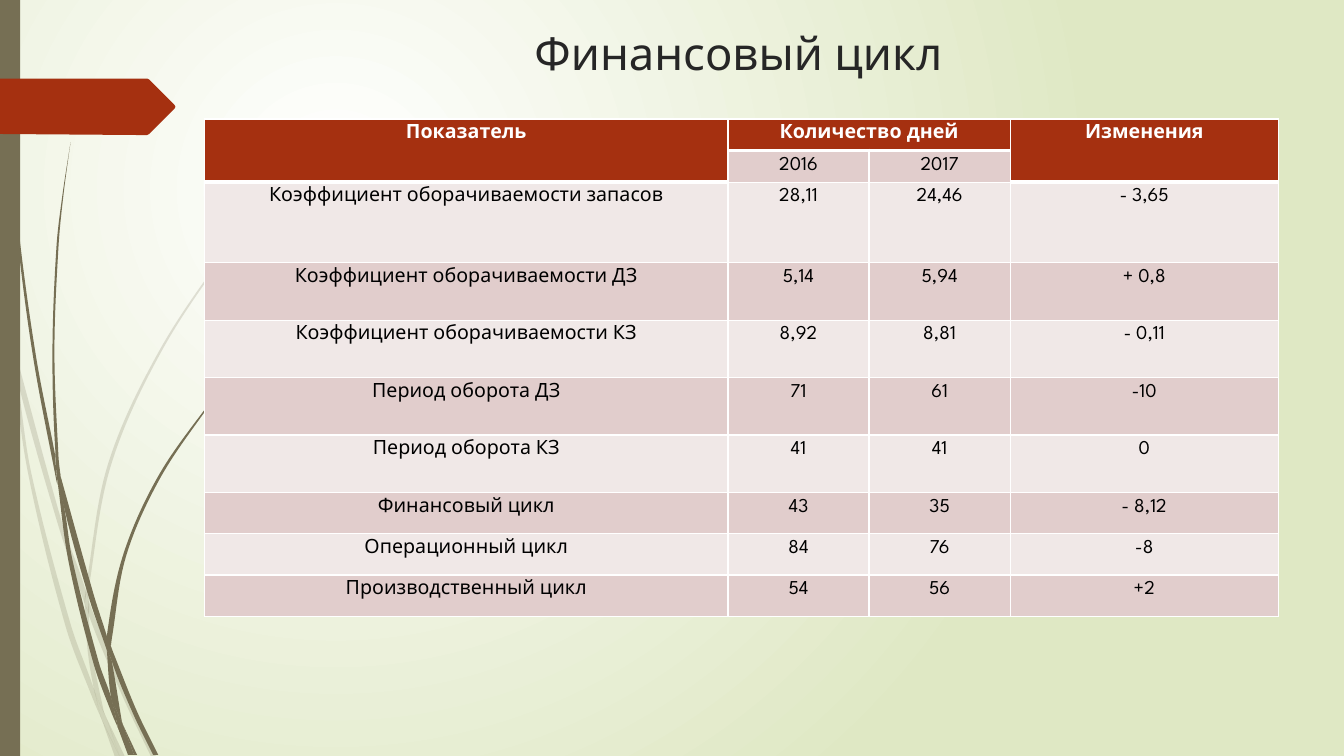
import math

from pptx import Presentation
from pptx import util as u
from pptx.dml.color import RGBColor
from pptx.enum import text
from pptx.enum.shapes import MSO_SHAPE
from pptx.oxml import ns
from lxml import etree

FONT = "League Spartan"
INK = {"olive": "766F54", "rust": "A53010", "white": "FFFFFF", "lime": "DFE8C4",
       "title": "262626", "black": "000000", "rose": "E1CDCC", "pale": "F0E8E7"}

# Outlines are x, y pairs in hundredths of an inch.
FAINT = [
    [(11, 350), (9, 322), (0, 282), (0, 299), (10, 344)],
    [(58, 522), (84, 599), (85, 586), (62, 520), (14, 345), (17, 376)],
    [(92, 607), (88, 596), (88, 610), (123, 694), (150, 751), (155, 751), (127, 692)],
    [(119, 751), (124, 751), (105, 711)],
    [(93, 683), (70, 619), (31, 469), (17, 376), (11, 350), (28, 470), (65, 621),
     (92, 693), (101, 714), (99, 707)],
    [(84, 599), (87, 646), (93, 683), (96, 692), (105, 711), (103, 706), (91, 646),
     (88, 610), (88, 608)],
    [(88, 584), (110, 462), (160, 349), (229, 245), (268, 198), (290, 175), (312, 154),
     (312, 153), (289, 175), (268, 197), (228, 244), (158, 348), (107, 461), (85, 584),
     (85, 586), (88, 596)],
    [(101, 714), (114, 751), (119, 751)],
    [(88, 608), (88, 610), (88, 596), (85, 586), (84, 599)],
    [(96, 692), (93, 683), (99, 707), (101, 714), (119, 751), (105, 711)],
]
DARK = [
    [(7, 110), (17, 233), (33, 355), (56, 477), (57, 481), (55, 457), (55, 453), (36, 355),
     (19, 232), (8, 109), (5, 48), (4, 0), (3, 0), (4, 48)],
    [(88, 592), (106, 645), (106, 633), (106, 631), (93, 590), (60, 472), (64, 505)],
    [(113, 649), (110, 641), (111, 656), (132, 708), (152, 749), (157, 749), (136, 706)],
    [(110, 691), (98, 657), (72, 556), (64, 505), (57, 477), (68, 557), (93, 659),
     (111, 708), (117, 722), (116, 717)],
    [(60, 472), (58, 453), (54, 349), (58, 245), (63, 193), (70, 141), (62, 193), (56, 245),
     (52, 349), (55, 449)],
    [(133, 749), (136, 749), (122, 719)],
    [(57, 477), (64, 505), (60, 472), (55, 449), (55, 453)],
    [(111, 633), (125, 552), (158, 476), (205, 406), (231, 374), (245, 359), (261, 344),
     (260, 344), (245, 358), (231, 373), (204, 405), (156, 474), (122, 551), (106, 631),
     (110, 641)],
    [(117, 722), (127, 749), (131, 749)],
    [(106, 645), (110, 691), (116, 706), (122, 719), (121, 716), (111, 656), (109, 651)],
    [(106, 645), (109, 651), (111, 656), (110, 641), (106, 631), (106, 633)],
    [(116, 706), (110, 691), (116, 717), (117, 722), (130, 749), (133, 749), (122, 719)],
]
ARROW = [(173, 108), (148, 133), (146, 134), (136, 134), (0, 133), (0, 78), (146, 78),
         (148, 79), (173, 104), (174, 106)]

COLS = [5.19, 1.4, 1.4, 2.66]
TALLS = [0.28] * 2 + [0.8] + [0.57] * 4 + [0.41] * 3
ROWS = [
    ["Показатель", "Количество дней", "", "Изменения"],
    ["", "2016", "2017", ""],
    ["Коэффициент оборачиваемости запасов", "28,11", "24,46", "- 3,65"],
    ["Коэффициент оборачиваемости ДЗ", "5,14", "5,94", "+ 0,8"],
    ["Коэффициент оборачиваемости КЗ", "8,92", "8,81", "- 0,11"],
    ["Период оборота ДЗ", "71", "61", "-10"],
    ["Период оборота КЗ", "41", "41", "0"],
    ["Финансовый цикл", "43", "35", "- 8,12"],
    ["Операционный цикл", "84", "76", "-8"],
    ["Производственный цикл", "54", "56", "+2"],
]


def rgb(name):
    return RGBColor.from_string(INK[name])


def sub(node, tag, **attrs):
    return etree.SubElement(node, ns.qn(tag), attrs)


def paint(shape, name):
    shape.shadow.inherit = False
    shape.fill.solid()
    shape.fill.fore_color.rgb = rgb(name)
    shape.line.fill.background()


def unit(a, b):
    size = math.dist(a, b) or 1
    return (b[0] - a[0]) / size, (b[1] - a[1]) / size


def slopes(prev, here, after):
    """Give the directions into and out of a point: one if smooth, two at a corner."""
    into, out = unit(prev, here), unit(here, after)
    if into[0] * out[0] + into[1] * out[1] < 0.77:
        return into, out
    return (unit(prev, after),) * 2


def bend(shape, points):
    """Turn the straight sides of a closed outline into curves."""
    trail = shape._element.find(".//" + ns.qn("a:path"))
    for node in list(trail)[1:]:
        trail.remove(node)
    left, top = (min(axis) for axis in zip(*points))
    ways = [slopes(points[i - 1], here, points[(i + 1) % len(points)])
            for i, here in enumerate(points)]
    for i in range(len(points)):
        a, b = points[i - 1], points[i]
        out, into = ways[i - 1][1], ways[i][0]
        reach = math.dist(a, b) / 3
        knots = ((a[0] + out[0] * reach, a[1] + out[1] * reach),
                 (b[0] - into[0] * reach, b[1] - into[1] * reach), b)
        curve = sub(trail, "a:cubicBezTo")
        for x, y in knots:
            sub(curve, "a:pt", x=str(round(x - left)), y=str(round(y - top)))
    sub(trail, "a:close")


def add_form(slide, outline, name, alpha=None, curved=True):
    """Draw a closed outline; alpha is its opacity in percent."""
    points = [(u.Inches(x / 100), u.Inches(y / 100)) for x, y in outline]
    points = points[1:] + points[:1]
    form = slide.shapes.build_freeform(*points[-1])
    form.add_line_segments(points[:-1], close=True)
    shape = form.convert_to_shape()
    if curved:
        bend(shape, points)
    paint(shape, name)
    if alpha:
        tint = shape._element.spPr.find(".//" + ns.qn("a:srgbClr"))
        sub(tint, "a:alpha", val=str(alpha * 1000))


def set_back(slide):
    """Fill the background with a round gradient centred at upper left."""
    fill = slide.background.fill
    fill.gradient()
    for stop, name in zip(fill.gradient_stops, ("white", "lime")):
        stop.color.rgb = rgb(name)
    grad = slide._element.find(".//" + ns.qn("a:gradFill"))
    grad.remove(grad.find(ns.qn("a:lin")))
    ring = sub(grad, "a:path", path="circle")
    sub(ring, "a:fillToRect", l="50000", t="50000", r="100000", b="100000")


def write(frame, words, size, name, bold=False):
    para = frame.paragraphs[0]
    para.alignment = text.PP_ALIGN.CENTER
    run = para.add_run()
    run.text = words
    font = run.font
    font.name, font.size, font.bold = FONT, u.Pt(size), bold
    font.color.rgb = rgb(name)


def add_title(slide, words):
    box = slide.shapes.add_textbox(u.Inches(2.45), u.Inches(0.24), u.Inches(9.75), u.Inches(0.6))
    frame = box.text_frame
    frame.word_wrap = True
    frame.vertical_anchor = text.MSO_ANCHOR.BOTTOM
    write(frame, words, 32.4, "title")


def edge(cell, base):
    """Give a cell white borders; base is the width of the lower one."""
    props = cell._tc.get_or_add_tcPr()
    for side, width in (("L", 1), ("R", 1), ("T", 1), ("B", base)):
        line = sub(props, "a:ln" + side, w=str(u.Pt(width)))
        sub(sub(line, "a:solidFill"), "a:srgbClr", val=INK["white"])


def add_grid(slide):
    frame = slide.shapes.add_table(len(ROWS), len(COLS), u.Inches(2.03), u.Inches(1.18),
                                   u.Inches(sum(COLS)), u.Inches(sum(TALLS)))
    grid = frame.table
    for col, width in zip(grid.columns, COLS):
        col.width = u.Inches(width)
    for row, tall in zip(grid.rows, TALLS):
        row.height = u.Inches(tall)
    for first, last in (((0, 0), (1, 0)), ((0, 1), (0, 2)), ((0, 3), (1, 3))):
        grid.cell(*first).merge(grid.cell(*last))
    for r, row in enumerate(ROWS):
        for c, words in enumerate(row):
            cell = grid.cell(r, c)
            head = r == 0 or (r == 1 and c in (0, 3))
            edge(cell, 3 if head else 1)
            cell.fill.solid()
            cell.fill.fore_color.rgb = rgb("rust" if head else ("pale", "rose")[r % 2])
            cell.margin_top, cell.margin_bottom = u.Inches(0.06), u.Inches(0.02)
            if words:
                write(cell.text_frame, words, 14, "white" if head else "black", head)


def main():
    deck = Presentation()
    deck.slide_width, deck.slide_height = u.Inches(13.33), u.Inches(7.5)
    slide = deck.slides.add_slide(deck.slide_layouts[6])
    set_back(slide)
    for leaf in FAINT:
        add_form(slide, leaf, "olive", 20)
    for leaf in DARK:
        add_form(slide, leaf, "olive")
    bar = slide.shapes.add_shape(MSO_SHAPE.RECTANGLE, 0, 0, u.Inches(0.2), u.Inches(7.5))
    paint(bar, "olive")
    add_form(slide, ARROW, "rust", curved=False)
    add_title(slide, "Финансовый цикл")
    add_grid(slide)
    deck.save("out.pptx")


if __name__ == "__main__":
    main()
